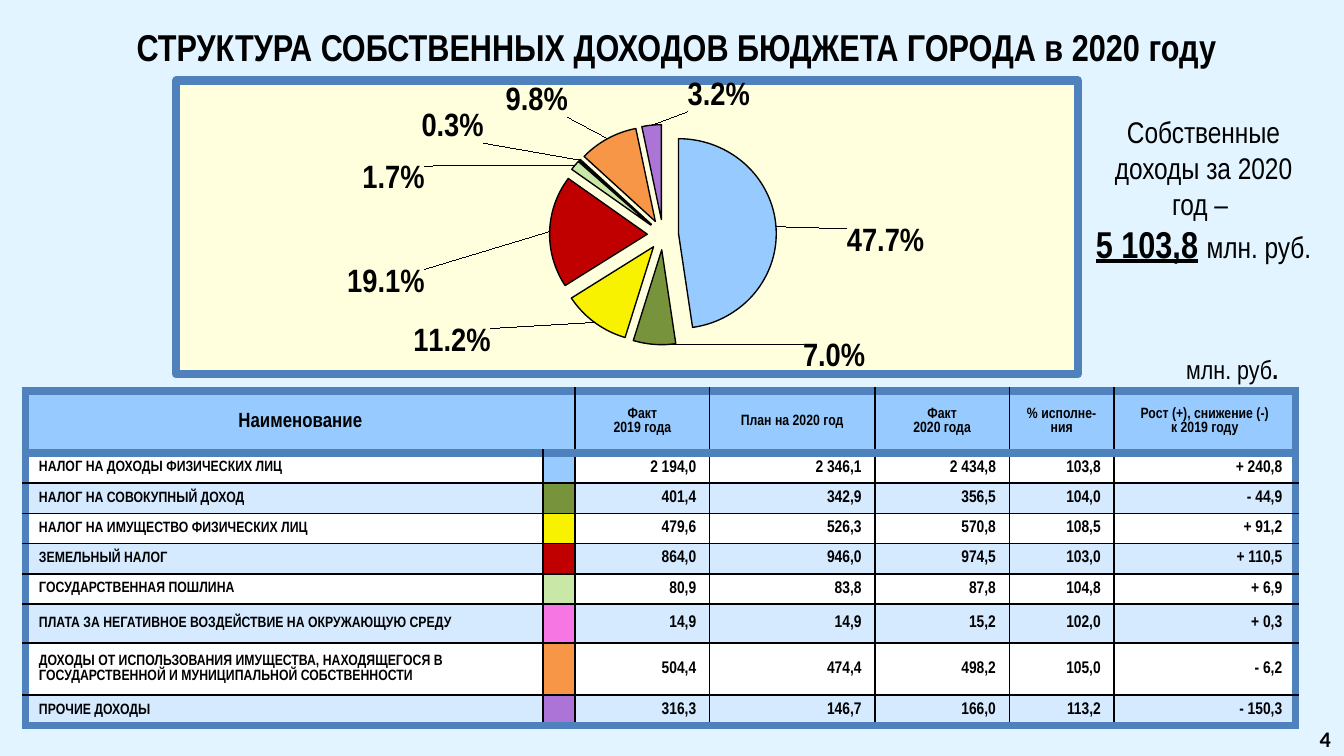
from pptx import Presentation
from pptx.chart.data import CategoryChartData
from pptx.dml.color import RGBColor
from pptx.enum.chart import XL_CHART_TYPE as ChartType
from pptx.enum.text import MSO_ANCHOR as Anchor, PP_ALIGN as Align
from pptx.oxml import parse_xml
from pptx.oxml.ns import nsdecls, qn
from pptx.util import Inches, Pt

COLORS = {
    "page": "E1F4FF", "panel": "FFFFDD", "frame": "4F81BD", "ink": "000000",
    "header": "97CBFF", "odd": "FFFFFF", "even": "D5EAFF",
}
FONT = "Arial Narrow"
WIDTH = 10
HEIGHT = WIDTH * 9 / 16
THICK, THIN = (COLORS["frame"], 4.5), (COLORS["ink"], 1)

TITLE = "СТРУКТУРА СОБСТВЕННЫХ ДОХОДОВ БЮДЖЕТА ГОРОДА в 2020 году"
HEADINGS = ["Наименование", "", "Факт\n2019 года", "План на 2020 год",
            "Факт\n2020 года", "% исполне-ния", "Рост (+), снижение (-)\nк 2019 году"]
INCOMES = [
    ("НАЛОГ НА ДОХОДЫ ФИЗИЧЕСКИХ ЛИЦ", "97CBFF", "2 194,0", "2 346,1", "2 434,8", "103,8", "+ 240,8"),
    ("НАЛОГ НА СОВОКУПНЫЙ ДОХОД", "77933C", "401,4", "342,9", "356,5", "104,0", "- 44,9"),
    ("НАЛОГ НА ИМУЩЕСТВО ФИЗИЧЕСКИХ ЛИЦ", "F8F200", "479,6", "526,3", "570,8", "108,5", "+ 91,2"),
    ("ЗЕМЕЛЬНЫЙ НАЛОГ", "C00000", "864,0", "946,0", "974,5", "103,0", "+ 110,5"),
    ("ГОСУДАРСТВЕННАЯ ПОШЛИНА", "C9E7A7", "80,9", "83,8", "87,8", "104,8", "+ 6,9"),
    ("ПЛАТА ЗА НЕГАТИВНОЕ ВОЗДЕЙСТВИЕ НА ОКРУЖАЮЩУЮ СРЕДУ", "F676E4",
     "14,9", "14,9", "15,2", "102,0", "+ 0,3"),
    ("ДОХОДЫ ОТ ИСПОЛЬЗОВАНИЯ ИМУЩЕСТВА, НАХОДЯЩЕГОСЯ В ГОСУДАРСТВЕННОЙ И МУНИЦИПАЛЬНОЙ СОБСТВЕННОСТИ",
     "F79646", "504,4", "474,4", "498,2", "105,0", "- 6,2"),
    ("ПРОЧИЕ ДОХОДЫ", "AC74D6", "316,3", "146,7", "166,0", "113,2", "- 150,3"),
]
SHARES = [47.7, 7, 11.2, 19.1, 1.7, 0.3, 9.8, 3.2]
LABEL_SHIFTS = [(0.07, 0.06), (0.2, -0.03), (-0.11, 0), (-0.13, 0.18),
                (-0.16, 0.12), (-0.1, -0.04), (-0.04, -0.05), (0.11, -0.02)]
COLUMNS = [3.85, 0.24, 1, 1.23, 1, 0.78, 1.35]
ROWS = [0.46] + [0.225] * 5 + [0.29, 0.39, 0.225]

deck = Presentation()
deck.slide_width, deck.slide_height = Inches(WIDTH), Inches(HEIGHT)
slide = deck.slides.add_slide(deck.slide_layouts[6])
slide.background.fill.solid()
slide.background.fill.fore_color.rgb = RGBColor.from_string(COLORS["page"])


def style(run, size, bold=False, underline=False, font=FONT):
    run.font.name, run.font.size = font, Pt(size)
    run.font.bold, run.font.underline = bold, underline
    run.font.color.rgb = RGBColor.from_string(COLORS["ink"])


def add_text(box, paragraphs, align, anchor=Anchor.TOP, spacing=None, font=FONT):
    frame = slide.shapes.add_textbox(*map(Inches, box)).text_frame
    frame.word_wrap, frame.vertical_anchor = True, anchor
    for index, runs in enumerate(paragraphs):
        line = frame.add_paragraph() if index else frame.paragraphs[0]
        line.alignment, line.line_spacing = align, spacing
        for words, *look in runs:
            run = line.add_run()
            run.text = words
            style(run, *look, font=font)


def outline(tag, color, width):
    return (f'<a:{tag} {nsdecls("a")} w="{Pt(width)}"><a:solidFill><a:srgbClr val="{color}"/>'
            f'</a:solidFill></a:{tag}>')


def fill_cell(cell, text, size, align, color, borders):
    cell.text_frame.text = text
    cell.vertical_anchor = Anchor.MIDDLE
    cell.margin_left = cell.margin_right = Inches(0.1)
    cell.margin_top = cell.margin_bottom = Inches(0.01)
    for line in cell.text_frame.paragraphs:
        line.alignment = align
        for run in line.runs:
            style(run, size, True)
        if not line.runs:
            line._p.append(parse_xml(f'<a:endParaRPr {nsdecls("a")} sz="800"/>'))
    props = cell._tc.get_or_add_tcPr()
    for tag, border in zip(("lnL", "lnR", "lnT", "lnB"), borders):
        props.append(parse_xml(outline(tag, *border)))
    cell.fill.solid()
    cell.fill.fore_color.rgb = RGBColor.from_string(color)


def add_incomes_table():
    table = slide.shapes.add_table(len(ROWS), len(COLUMNS), Inches(0.19), Inches(2.91),
                                   Inches(sum(COLUMNS)), Inches(sum(ROWS))).table
    for column, width in zip(table.columns, COLUMNS):
        column.width = Inches(width)
    for row, height in zip(table.rows, ROWS):
        row.height = Inches(height)
    table.cell(0, 0).merge(table.cell(0, 1))
    last_row, last_column = len(ROWS) - 1, len(COLUMNS) - 1
    for r, texts in enumerate([HEADINGS, *INCOMES]):
        for c, text in enumerate(texts):
            borders = [THICK if edge else THIN for edge in
                       (c == 0, c == last_column, r < 2, r in (0, last_row))]
            size, align, color = 9, Align.RIGHT, COLORS["odd" if r % 2 else "even"]
            if r == 0:
                size, align, color = 8 if c else 11, Align.CENTER, COLORS["header"]
            elif c == 0:
                size, align = 8, Align.LEFT
            elif c == 1:
                text, color = "", text
            fill_cell(table.cell(r, c), text, size, align, color, borders)


def manual_layout(x, y, extra=""):
    return (f'<c:layout {nsdecls("c")}><c:manualLayout>{extra}'
            f'<c:x val="{x}"/><c:y val="{y}"/>')


def add_shares_chart():
    shares = CategoryChartData()
    shares.categories = [str(n + 1) for n in range(len(SHARES))]
    shares.add_series("Series 1", SHARES)
    chart = slide.shapes.add_chart(ChartType.PIE, *map(Inches, (1.28, 0.57, 6.77, 2.27)), shares).chart
    chart.has_legend = chart.has_title = False
    chart.font.name, chart.font.size, chart.font.bold = FONT, Pt(18), True
    chart.font.color.rgb = RGBColor.from_string(COLORS["ink"])
    panel = f'<a:solidFill><a:srgbClr val="{COLORS["panel"]}"/></a:solidFill>'
    chart._chartSpace.find(qn("c:chart")).addnext(parse_xml(
        f'<c:spPr {nsdecls("c", "a")}>{panel}{outline("ln", *THICK)}</c:spPr>'))

    area = chart._chartSpace.chart.plotArea
    for old in area.findall(qn("c:layout")):
        area.remove(old)
    modes = '<c:layoutTarget val="inner"/><c:xMode val="edge"/><c:yMode val="edge"/>'
    area.insert(0, parse_xml(manual_layout(0.08, 0.15, modes)
                             + '<c:w val="0.92"/><c:h val="0.75"/></c:manualLayout></c:layout>'))
    area.append(parse_xml(f'<c:spPr {nsdecls("c", "a")}>{panel}</c:spPr>'))

    pie = chart.plots[0]
    pie.vary_by_categories = True
    series = pie.series[0]
    for index, income in enumerate(INCOMES):
        slice_format = series.points[index].format
        slice_format.fill.solid()
        slice_format.fill.fore_color.rgb = RGBColor.from_string(income[1])
        slice_format.line.color.rgb = RGBColor.from_string(COLORS["ink"])
        slice_format.line.width = Pt(0.75)
    explosion = parse_xml(f'<c:explosion {nsdecls("c")} val="16"/>')
    series._element.find(qn("c:dPt")).addprevious(explosion)

    shows = "".join(f'<c:show{part} val="{int(part == "Percent")}"/>' for part in
                    ("LegendKey", "Val", "CatName", "SerName", "Percent", "BubbleSize"))
    common = '<c:numFmt formatCode="0.0%" sourceLinked="0"/><c:dLblPos val="outEnd"/>' + shows
    labels = "".join(f'<c:dLbl><c:idx val="{index}"/>{manual_layout(*shift)}'
                     f'</c:manualLayout></c:layout>{common}</c:dLbl>'
                     for index, shift in enumerate(LABEL_SHIFTS))
    series._element.find(qn("c:cat")).addprevious(parse_xml(
        f'<c:dLbls {nsdecls("c")}>{labels}{common}<c:showLeaderLines val="1"/></c:dLbls>'))


add_incomes_table()
add_text((8.05, 0.8, 1.81, 1.25),
         [[("Собственные доходы за 2020 год – ", 16)],
          [("5 103,8", 20, True, True), (" ", 20, True), ("млн. руб.", 16)]], Align.CENTER)
add_text((0.2, 0.1, 9.67, 0.43), [[(TITLE, 20, True)]], Align.CENTER, Anchor.MIDDLE, 1.2)
add_shares_chart()
add_text((8.15, 2.58, 1.46, 0.34), [[("млн. руб", 14), (".", 14, True)]], Align.RIGHT)
add_text((9.44, 5.35, 0.56, 0.26), [[("4", 11.9, True)]], Align.RIGHT, font="Calibri")
deck.save("out.pptx")
